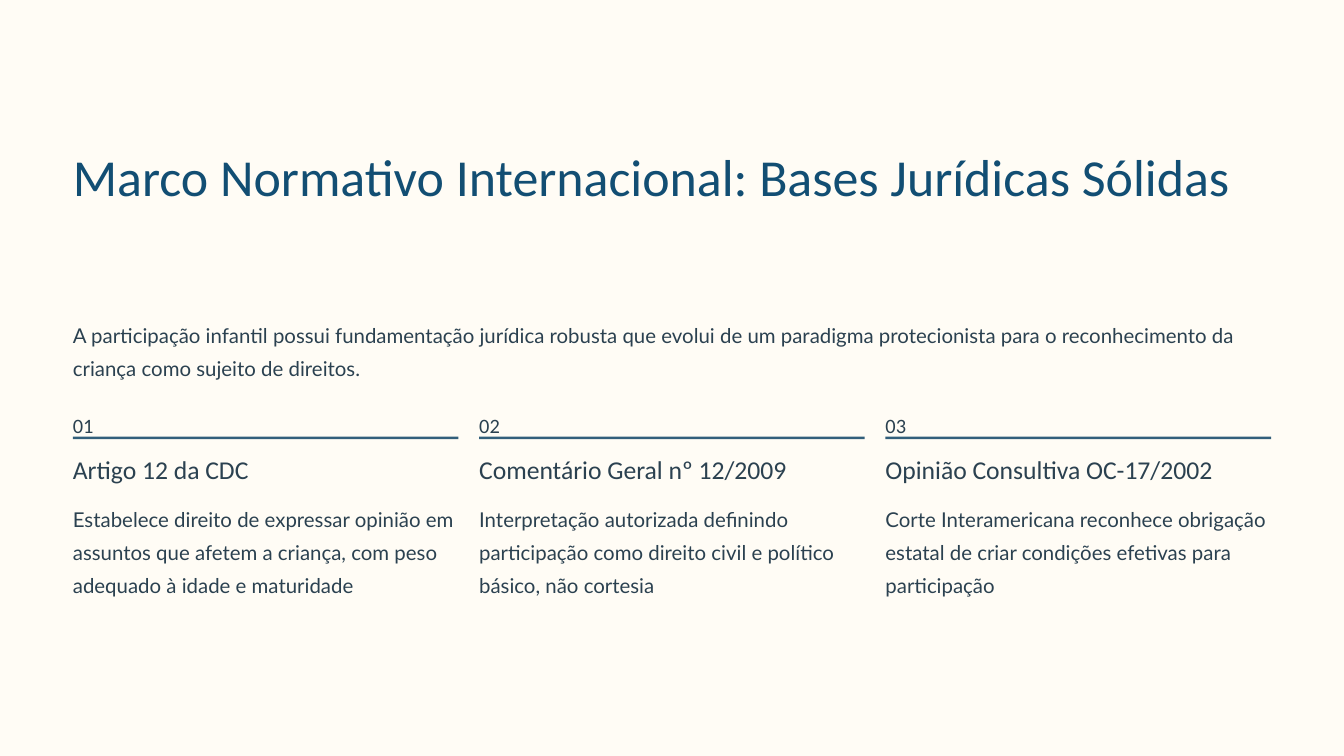
import dataclasses

import pptx
import pptx.dml.color
import pptx.enum.shapes
import pptx.util

Pt = pptx.util.Pt
RGB = pptx.dml.color.RGBColor.from_string


@dataclasses.dataclass(frozen=True)
class Style:
    size: float
    leading: float
    font: str
    color: str


@dataclasses.dataclass(frozen=True)
class Theme:
    background: str = "FFFCF5"
    rule: str = "325F7B"
    title: Style = Style(44.5, 55.5, "Calibri", "124E73")
    body: Style = Style(17.5, 28.5, "Lato", "2B4150")
    number: Style = Style(17.5, 28.5, "Calibri", "2B4150")
    heading: Style = Style(22, 27.5, "Calibri", "2B4150")


THEME = Theme()
WIDTH, HEIGHT = 1152, 648
MARGIN = 62.5
GAP = 17.7

TITLE = "Marco Normativo Internacional: Bases Jurídicas Sólidas"
INTRO = ("A participação infantil possui fundamentação jurídica robusta que evolui de um "
         "paradigma protecionista para o reconhecimento da criança como sujeito de direitos.")
# Heading, width of the heading, description
SOURCES = [
    ("Artigo 12 da CDC", 223,
     "Estabelece direito de expressar opinião em assuntos que afetem a criança, "
     "com peso adequado à idade e maturidade"),
    ("Comentário Geral nº 12/2009", 310,
     "Interpretação autorizada definindo participação como direito civil e político "
     "básico, não cortesia"),
    ("Opinião Consultiva OC-17/2002", 330,
     "Corte Interamericana reconhece obrigação estatal de criar condições efetivas "
     "para participação"),
]


def add_text(slide, box, text, style, wrap=True):
    tf = slide.shapes.add_textbox(*map(Pt, box)).text_frame
    frame_format = dict(margin_left=0, margin_top=0, margin_right=0, margin_bottom=0,
                        word_wrap=wrap)
    for name, value in frame_format.items():
        setattr(tf, name, value)
    p = tf.paragraphs[0]
    p.line_spacing = Pt(style.leading)
    r = p.add_run()
    r.text = text
    for name, value in dict(name=style.font, size=Pt(style.size)).items():
        setattr(r.font, name, value)
    r.font.color.rgb = RGB(style.color)


def add_rule(slide, box):
    sp = slide.shapes.add_shape(pptx.enum.shapes.MSO_SHAPE.RECTANGLE, *map(Pt, box))
    sp.shadow.inherit = False
    sp.fill.solid()
    sp.fill.fore_color.rgb = RGB(THEME.rule)
    sp.line.fill.background()


def add_source(slide, box, number, heading, heading_width, description):
    """Place one numbered column: number, rule, heading and description."""
    x, y, w, h = box
    add_text(slide, (x, y, 18, 22.5), f"{number:02d}", THEME.number, wrap=False)
    add_rule(slide, (x, y + 28, w, 2.2))
    add_text(slide, (x, y + 41.8, heading_width, 28), heading, THEME.heading, wrap=False)
    add_text(slide, (x, y + 80.7, w, h - 80.7), description, THEME.body)


def add_sources(slide, box):
    x, y, w, h = box
    column = (w - GAP * (len(SOURCES) - 1)) / len(SOURCES)
    for i, source in enumerate(SOURCES):
        add_source(slide, (x + i * (column + GAP), y, column, h), i + 1, *source)


def main():
    prs = pptx.Presentation()
    prs.slide_width, prs.slide_height = Pt(WIDTH), Pt(HEIGHT)
    slide = prs.slides.add_slide(prs.slide_layouts[6])
    fill = slide.background.fill
    fill.solid()
    fill.fore_color.rgb = RGB(THEME.background)

    content = WIDTH - 2 * MARGIN
    add_text(slide, (MARGIN, 121.7, content, 111.6), TITLE, THEME.title)
    add_text(slide, (MARGIN, 269.3, content, 57), INTRO, THEME.body)
    add_sources(slide, (MARGIN, 346.3, content, 166.4))
    prs.save("out.pptx")


if __name__ == "__main__":
    main()
